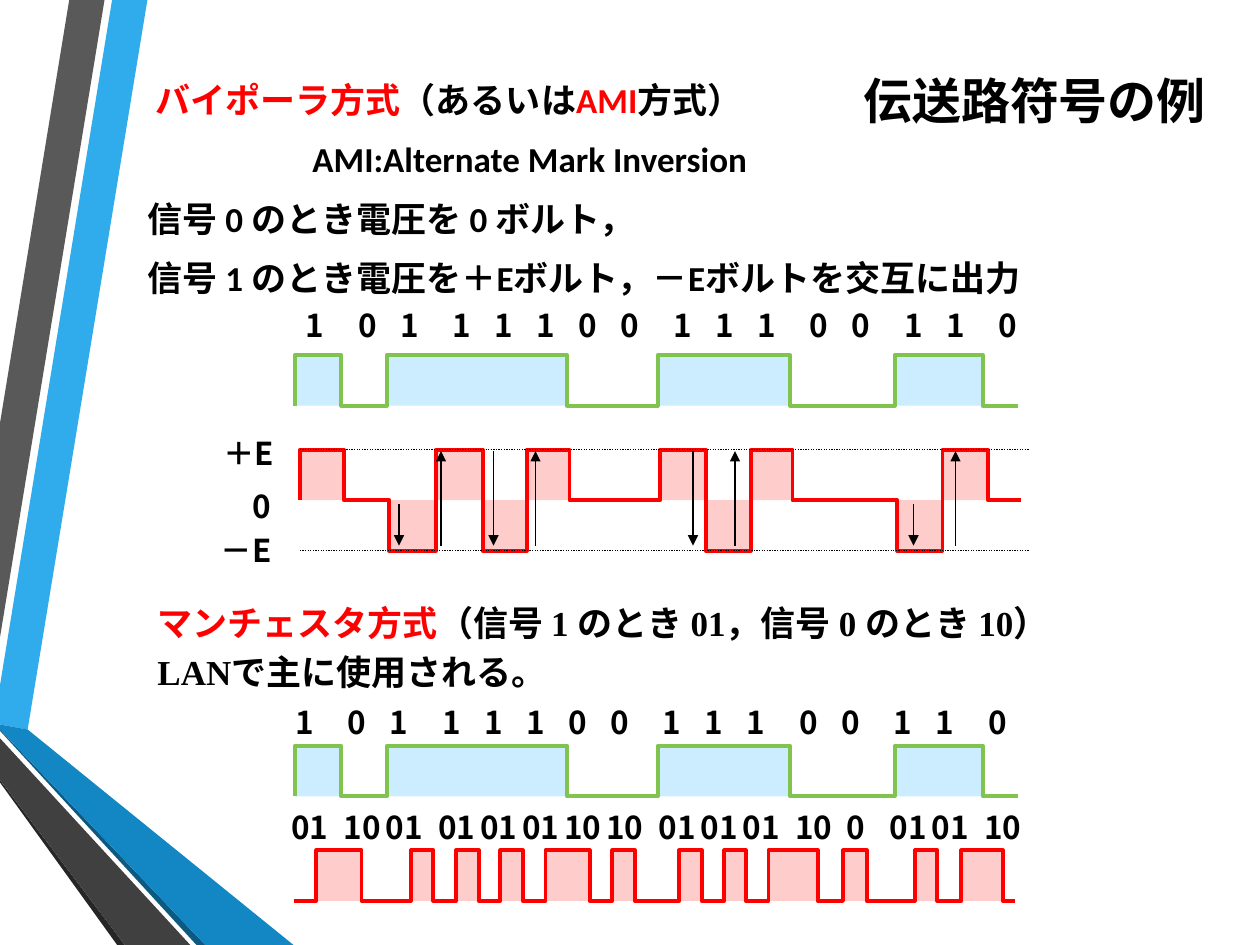
from lxml.etree import SubElement
from pptx import Presentation
from pptx.dml.color import RGBColor
from pptx.enum.dml import MSO_LINE
from pptx.enum.shapes import MSO_CONNECTOR
from pptx.enum.text import MSO_ANCHOR, PP_ALIGN
from pptx.oxml.ns import qn
from pptx.util import Inches, Pt

C = {"black": "000000", "red": "FF0000", "pink": "FFCCCC", "green": "80C34F",
     "pale": "CCECFF", "sky": "30ACEC", "gray": "595959", "coal": "262626",
     "navy": "0C5A82", "blue": "1287C3", "dark": "404040"}
CJK = "Noto Sans CJK JP"
COL = 1 / 12  # grid column in inches

prs = Presentation()
prs.slide_width, prs.slide_height = Inches(10), Inches(7.5)
s = prs.slides.add_slide(prs.slide_layouts[6])


def outline(points, fill, line=None, close=False):
    pts = [(Inches(x), Inches(y)) for x, y in points]
    fb = s.shapes.build_freeform(*pts[0])
    fb.add_line_segments(pts[1:], close=close)
    sp = fb.convert_to_shape()
    sp.shadow.inherit = False
    sp.fill.solid()
    sp.fill.fore_color.rgb = RGBColor.from_string(C[fill])
    if line:
        sp.line.color.rgb = RGBColor.from_string(C[line])
        sp.line.width = Pt(2.25)
    else:
        sp.line.fill.background()


def text(x, y, w, h, paras, size=18, font=CJK, align=PP_ALIGN.CENTER,
         anchor=MSO_ANCHOR.MIDDLE, spacing=0.96, before=0, after=0):
    """Each paragraph is a list of (text, colour) runs."""
    tf = s.shapes.add_textbox(Inches(x), Inches(y), Inches(w), Inches(h)).text_frame
    tf.word_wrap = True
    tf.vertical_anchor = anchor
    tf.margin_left = tf.margin_right = tf.margin_top = tf.margin_bottom = 0
    for i, runs in enumerate(paras):
        p = tf.paragraphs[0] if i == 0 else tf.add_paragraph()
        p.alignment, p.line_spacing = align, spacing
        p.space_before, p.space_after = Pt(before), Pt(after)
        p.font.size, p.font.bold, p.font.name = Pt(size), True, font
        for words, color in runs:
            r = p.add_run()
            r.text = words
            r.font.color.rgb = RGBColor.from_string(C[color])
    return tf


# Ribbons along the left edge
for fill, points in [
    ("sky", [(0, 5.44), (0, 5.75), (0.22, 5.79), (1.17, 0), (0.89, 0)]),
    ("gray", [(0.83, 0), (0.55, 0), (0, 3.36), (0, 5.06)]),
    ("coal", [(0, 6.19), (0, 6.21), (0.93, 7.5), (0.99, 7.5)]),
    ("navy", [(0, 5.79), (0, 5.8), (1.56, 7.5), (1.63, 7.5)]),
    ("blue", [(0, 5.79), (1.63, 7.5), (2.33, 7.5), (0.22, 5.79), (0, 5.75)]),
    ("dark", [(0, 6.19), (0.99, 7.5), (1.51, 7.5), (0, 5.86)]),
]:
    outline(points, fill, close=True)

# Title and explanations
text(1.17, 0.17, 8.4, 1.25, [[("伝送路符号の例", "black")]], 28, "Calibri",
     PP_ALIGN.RIGHT, spacing=1)
tf = text(1.17, 0.66, 8.5, 1.67, [
    [(" ", "black"), ("バイポーラ方式", "red"), ("（あるいは", "black"),
     ("AMI", "red"), ("方式）", "black")],
    [("AMI:Alternate Mark Inversion", "black")],
    [("信号 0 のとき電圧を 0 ボルト，", "black")],
    [("信号 1 のとき電圧を＋Eボルト，－Eボルトを交互に出力", "black")],
], 20, "Calibri", PP_ALIGN.LEFT, spacing=1, before=4, after=6)
tf.paragraphs[1]._p.get_or_add_pPr().set("marL", str(Inches(1.31)))
text(1.25, 4.77, 8.33, 0.75, [
    [("マンチェスタ方式", "red"), ("（信号 1 のとき 01，信号 0 のとき 10）", "black")],
    [("LANで主に使用される。", "black")],
], 20, "Times New Roman", PP_ALIGN.LEFT, MSO_ANCHOR.TOP, 1, before=4)

# Waveforms: start x, base y, then the level and right edge of each step
SIGNAL_X = [2.71, 3.07, 4.5, 5.22, 6.27, 7.1, 7.8, 8.08]
AMI_X = [2.73, 3.09, 3.46, 3.83, 4.18, 4.52, 5.24, 5.6, 5.96, 6.29, 7.12, 7.48, 7.84, 8.1]
MANCHESTER_X = [2.51, 2.87, 3.26, 3.44, 3.62, 3.8, 3.97, 4.15, 4.33, 4.68, 4.86, 5.04, 5.39,
                5.57, 5.75, 5.92, 6.1, 6.49, 6.69, 6.88, 7.26, 7.44, 7.63, 7.96, 8.06]
for x, base, levels, edges, fill, line in [
    (2.34, 3.22, "+0" * 4, SIGNAL_X, "pale", "green"),
    (2.38, 3.97, "+0-+-+0+-+0-+0", AMI_X, "pink", "red"),
    (2.34, 6.32, "+0" * 4, SIGNAL_X, "pale", "green"),
    (2.33, 7.15, "0+" * 12 + "0", MANCHESTER_X, "pink", "red"),
]:
    points = [(x, base)]
    for level, edge in zip(levels, edges):
        y = base - {"+": 0.4, "0": 0, "-": -0.4}[level]
        points += [(x, y), (edge, y)]
        x = edge
    outline(points, fill, line)

# Voltage labels
for x, y, label in [(1.77, 3.41, "＋E"), (1.75, 4.18, "－E"), (1.75, 3.83, "\u3000" "0")]:
    text(x, y, 0.72, 0.4, [[(label, "black")]], align=PP_ALIGN.JUSTIFY)

# Bit rows: columns of each bit, counted from the first
BITS = "1011110011100110"
BIT_COLS = [0, 5, 9, 14, 18, 22, 26, 30, 35, 39, 43, 48, 52, 57, 61, 66]
CODES = [{"1": "01", "0": "10"}[b] for b in BITS]
CODES[12] = "0"
for first, y, cols, labels, anchor in [
    (28, 2.39, 4, BITS, MSO_ANCHOR.MIDDLE),
    (27, 5.6, 4, BITS, MSO_ANCHOR.TOP),
    (27, 6.43, 5, CODES, MSO_ANCHOR.TOP),
]:
    for col, label in zip(BIT_COLS, labels):
        text((first + col) * COL, y, cols * COL, 0.4, [[(label, "black")]], anchor=anchor)

# Dotted level lines and polarity arrows
LOW, HIGH, ZERO = 4.33, 3.58, 4
lines = [(2.38, y, 8.17, y, False) for y in (4.37, 3.57)]
lines += [(col * COL, y1, col * COL, y2, True) for col, y1, y2 in [
    (38, ZERO, LOW), (42, LOW, HIGH), (47, HIGH, LOW), (51, LOW, HIGH),
    (66, HIGH, LOW), (70, LOW, HIGH), (87, ZERO, LOW), (91, LOW, HIGH)]]
for x1, y1, x2, y2, arrow in lines:
    c = s.shapes.add_connector(MSO_CONNECTOR.STRAIGHT, Inches(x1), Inches(y1),
                               Inches(x2), Inches(y2))
    c.line.color.rgb = RGBColor.from_string(C["black"])
    c.line.width = Pt(0.75)
    if arrow:
        SubElement(c.line._get_or_add_ln(), qn("a:tailEnd"), type="triangle")
    else:
        c.line.dash_style = MSO_LINE.ROUND_DOT
    SubElement(c._element.spPr, qn("a:effectLst"))

prs.save("out.pptx")
